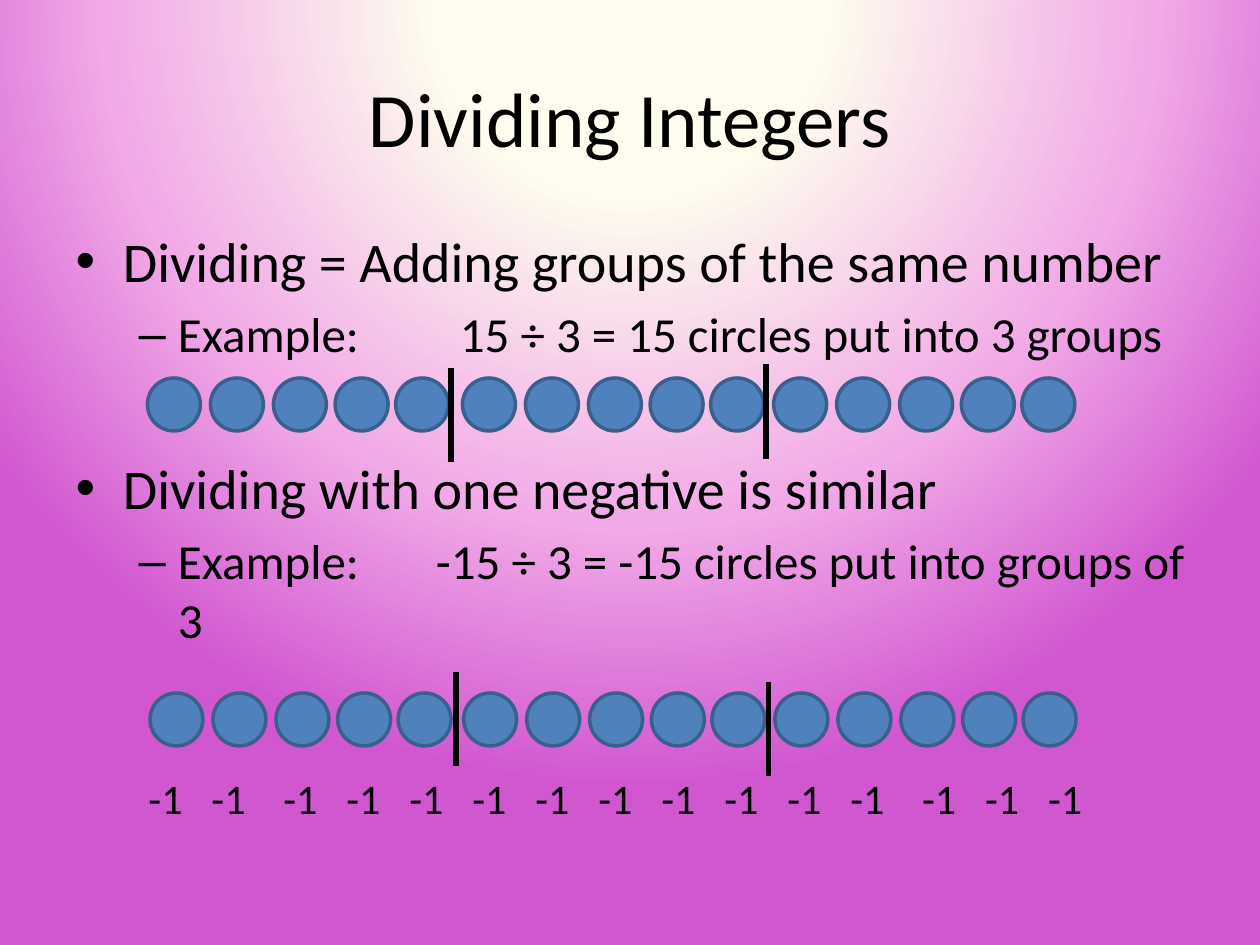
from lxml.etree import SubElement
from pptx import Presentation
from pptx.dml.color import RGBColor
from pptx.enum.shapes import MSO_CONNECTOR, MSO_SHAPE
from pptx.enum.text import MSO_ANCHOR, MSO_AUTO_SIZE, PP_ALIGN
from pptx.oxml import parse_xml
from pptx.oxml.ns import nsdecls, qn
from pptx.util import Inches, Pt

FONT = "Calibri"
COLORS = {"text": "000000", "circle": "4F81BD", "outline": "3A5F8C", "divider": "000000"}
BACKGROUND_STOPS = [(25, "FEFCEE"), (67, "F1A9E7"), (100, "D157D1")]

TITLE = "Dividing Integers"
# text, level, tab stop (inches), space before (points)
BODY = [
    ("Dividing = Adding groups of the same number", 0, None, None),
    ("Example:\t15 ÷ 3 = 15 circles put into 3 groups", 1, 3.05, None),
    ("Dividing with one negative is similar", 0, None, 52),
    ("Example:\t-15 ÷ 3 = -15 circles put into groups of 3", 1, 2.86, None),
]
LEVEL_SIZES = [32, 28]

CIRCLE_SIZE = 0.42
CIRCLE_OFFSETS = [0, 0.5, 1, 1.49, 1.97]
# top of the circles, left of each group, (x, top) of each divider
CIRCLE_ROWS = [
    (3, [1.17, 3.67, 6.14], [(3.58, 2.92), (6.08, 2.89)]),
    (5.5, [1.19, 3.68, 6.15], [(3.62, 5.33), (6.1, 5.41)]),
]
DIVIDER_HEIGHT = 0.75

LABELS = ["-1"] * 15
LABEL_PITCH = 0.5
WIDE_GAPS = {2: 0.07, 12: 0.07}


def color(name):
    return RGBColor.from_string(COLORS[name])


def format_text(paragraph, size):
    paragraph.font.name = FONT
    paragraph.font.size = Pt(size)
    paragraph.font.color.rgb = color("text")


def add_tabs(paragraph, positions):
    tab_list = SubElement(paragraph._p.get_or_add_pPr(), qn("a:tabLst"))
    for position in positions:
        SubElement(tab_list, qn("a:tab"), pos=str(Inches(position)), algn="l")


def place(shape, left, top, width, height):
    shape.left, shape.top = Inches(left), Inches(top)
    shape.width, shape.height = Inches(width), Inches(height)


def set_background(slide):
    """Fill the background with a circular gradient centred above the slide."""
    stops = "".join(
        f'<a:gs pos="{position * 1000}"><a:srgbClr val="{value}"/></a:gs>'
        for position, value in BACKGROUND_STOPS
    )
    gradient = parse_xml(
        f'<a:gradFill {nsdecls("a")} rotWithShape="1"><a:gsLst>{stops}</a:gsLst>'
        '<a:path path="circle"><a:fillToRect l="50000" t="-80000" r="50000" b="180000"/>'
        "</a:path></a:gradFill>"
    )
    slide.background.fill.gradient()
    default = slide._element.find(".//" + qn("a:gradFill"))
    default.getparent().replace(default, gradient)


def add_title(slide):
    title = slide.shapes.title
    place(title, 0.5, 0.3, 9, 1.25)
    title.text_frame.text = TITLE
    title.text_frame.vertical_anchor = MSO_ANCHOR.MIDDLE
    paragraph = title.text_frame.paragraphs[0]
    paragraph.alignment = PP_ALIGN.CENTER
    format_text(paragraph, 44)


def add_body(slide):
    body = slide.placeholders[1]
    place(body, 0.5, 1.75, 9, 4.95)
    frame = body.text_frame
    frame.auto_size = MSO_AUTO_SIZE.NONE
    frame.text = "\n".join(text for text, *_ in BODY)
    for paragraph, (_, level, tab, space_before) in zip(frame.paragraphs, BODY):
        paragraph.level = level
        if space_before:
            paragraph.space_before = Pt(space_before)
        if tab:
            add_tabs(paragraph, [tab])
        format_text(paragraph, LEVEL_SIZES[level])


def add_circle_group(slide, left, top):
    group = slide.shapes.add_group_shape()
    for offset in CIRCLE_OFFSETS:
        circle = group.shapes.add_shape(
            MSO_SHAPE.OVAL, Inches(left + offset), Inches(top),
            Inches(CIRCLE_SIZE), Inches(CIRCLE_SIZE),
        )
        circle.shadow.inherit = False
        circle.fill.solid()
        circle.fill.fore_color.rgb = color("circle")
        circle.line.color.rgb = color("outline")
        circle.line.width = Pt(2)


def add_divider(slide, x, top):
    divider = slide.shapes.add_connector(
        MSO_CONNECTOR.STRAIGHT, Inches(x), Inches(top), Inches(x), Inches(top + DIVIDER_HEIGHT)
    )
    divider.line.color.rgb = color("divider")
    divider.line.width = Pt(3)
    SubElement(divider._element.spPr, qn("a:effectLst"))


def add_labels(slide):
    box = slide.shapes.add_textbox(Inches(1.08), Inches(6.08), Inches(8.42), Inches(0.5))
    box.text_frame.word_wrap = True
    paragraph = box.text_frame.paragraphs[0]
    paragraph.text = "\t".join(LABELS)
    add_tabs(paragraph, [
        index * LABEL_PITCH + sum(gap for start, gap in WIDE_GAPS.items() if index >= start)
        for index in range(1, len(LABELS))
    ])
    format_text(paragraph, 24)


def main():
    presentation = Presentation()
    presentation.slide_width, presentation.slide_height = Inches(10), Inches(7.5)
    slide = presentation.slides.add_slide(presentation.slide_layouts[1])
    set_background(slide)
    add_title(slide)
    add_body(slide)
    for top, group_lefts, _ in CIRCLE_ROWS:
        for left in group_lefts:
            add_circle_group(slide, left, top)
    add_labels(slide)
    for _, _, dividers in CIRCLE_ROWS:
        for x, divider_top in dividers:
            add_divider(slide, x, divider_top)
    presentation.save("out.pptx")


if __name__ == "__main__":
    main()
